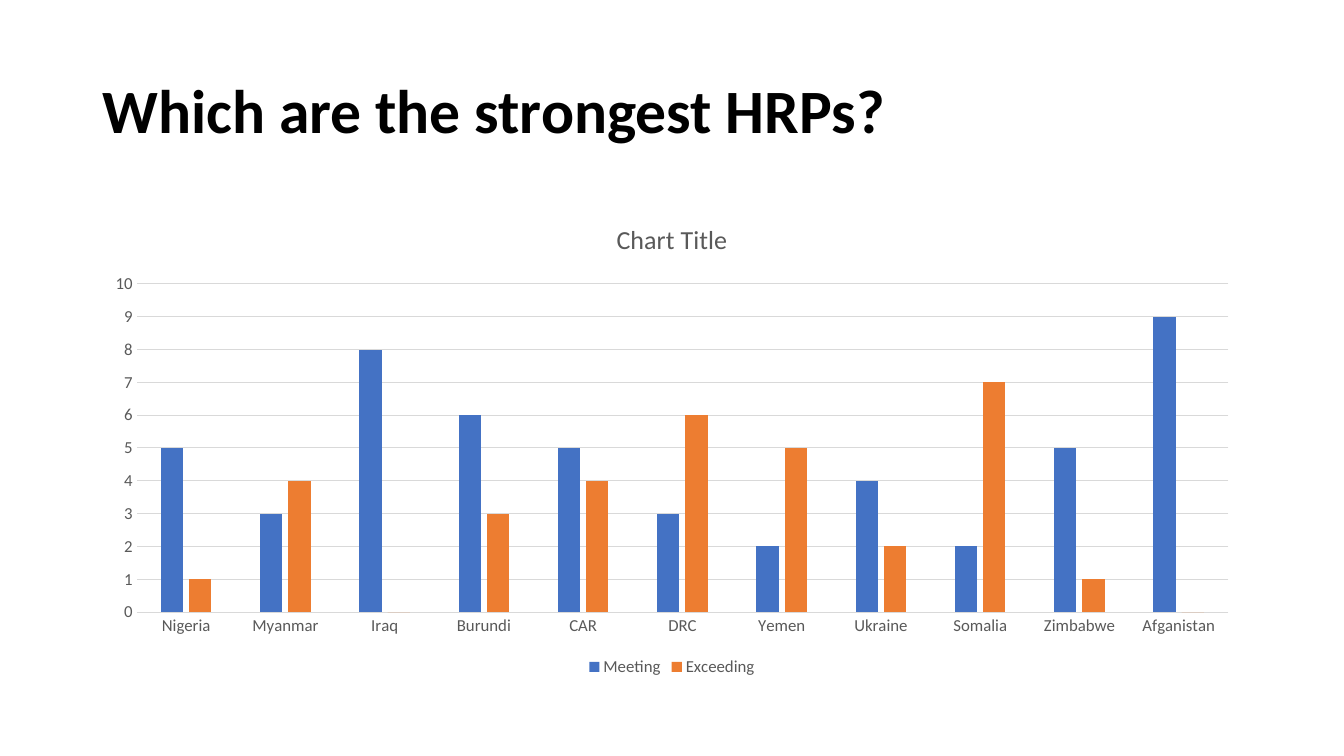
from dataclasses import dataclass

from pptx import Presentation
from pptx.chart.data import CategoryChartData
from pptx.dml.color import RGBColor
from pptx.enum.chart import XL_CHART_TYPE, XL_LEGEND_POSITION, XL_TICK_MARK
from pptx.enum.text import MSO_ANCHOR, MSO_AUTO_SIZE, PP_ALIGN
from pptx.util import Pt

FACE = "Calibri"
GREY = "595959"
RULE = "D9D9D9"
LEFT, WIDE = 66, 828


@dataclass
class Series:
    name: str
    color: str
    vals: list[int]


LANDS = ["Nigeria", "Myanmar", "Iraq", "Burundi", "CAR", "DRC", "Yemen",
         "Ukraine", "Somalia", "Zimbabwe", "Afganistan"]
SCORES = [
    Series("Meeting", "4472C4", [5, 3, 8, 6, 5, 3, 2, 4, 2, 5, 9]),
    Series("Exceeding", "ED7D31", [1, 4, 0, 3, 4, 6, 5, 2, 7, 1, 0]),
]


def paint(color, code: str) -> None:
    color.rgb = RGBColor.from_string(code)


def style(font, size: float, code: str, bold: bool = False) -> None:
    font.name = FACE
    font.size = Pt(size)
    font.bold = bold
    paint(font.color, code)


def rule(line) -> None:
    line.width = Pt(0.75)
    line.fill.solid()
    paint(line.color, RULE)


def add_title(slide, text: str) -> None:
    title = slide.shapes.title
    title.left, title.top = Pt(LEFT), Pt(28.75)
    title.width, title.height = Pt(WIDE), Pt(104.4)
    frame = title.text_frame
    frame.auto_size = MSO_AUTO_SIZE.NONE
    frame.word_wrap = True
    frame.vertical_anchor = MSO_ANCHOR.MIDDLE
    para = frame.paragraphs[0]
    para.alignment = PP_ALIGN.LEFT
    para.line_spacing = 0.9
    run = para.add_run()
    run.text = text
    style(run.font, 44, "000000", True)


def add_chart(slide, lands: list[str], scores: list[Series]) -> None:
    data = CategoryChartData()
    data.categories = lands
    for score in scores:
        data.add_series(score.name, score.vals)
    chart = slide.shapes.add_chart(
        XL_CHART_TYPE.COLUMN_CLUSTERED,
        Pt(LEFT), Pt(143.75), Pt(WIDE), Pt(342.6), data).chart
    style(chart.font, 10, "000000")

    # Heading and legend
    chart.has_title = True
    run = chart.chart_title.text_frame.paragraphs[0].add_run()
    run.text = "Chart Title"
    style(run.font, 18.6, GREY)
    chart.chart_title.include_in_layout = False
    chart.has_legend = True
    chart.legend.position = XL_LEGEND_POSITION.BOTTOM
    chart.legend.include_in_layout = False
    style(chart.legend.font, 12, GREY)

    # Axes
    for axis in (chart.category_axis, chart.value_axis):
        axis.major_tick_mark = XL_TICK_MARK.NONE
        axis.minor_tick_mark = XL_TICK_MARK.NONE
        style(axis.tick_labels.font, 12, GREY)
    rule(chart.category_axis.format.line)
    scale = chart.value_axis
    scale.minimum_scale, scale.maximum_scale = 0, 10
    scale.major_unit = 1
    scale.format.line.fill.background()
    scale.has_major_gridlines = True
    rule(scale.major_gridlines.format.line)

    # Columns
    plot = chart.plots[0]
    plot.gap_width = 219
    plot.overlap = -27
    plot.vary_by_categories = False
    for bars, score in zip(plot.series, scores):
        bars.invert_if_negative = False
        bars.format.fill.solid()
        paint(bars.format.fill.fore_color, score.color)


def main() -> None:
    deck = Presentation()
    deck.slide_width, deck.slide_height = Pt(960), Pt(540)
    slide = deck.slides.add_slide(deck.slide_layouts[5])
    add_title(slide, "Which are the strongest HRPs?")
    add_chart(slide, LANDS, SCORES)
    deck.save("out.pptx")


if __name__ == "__main__":
    main()
